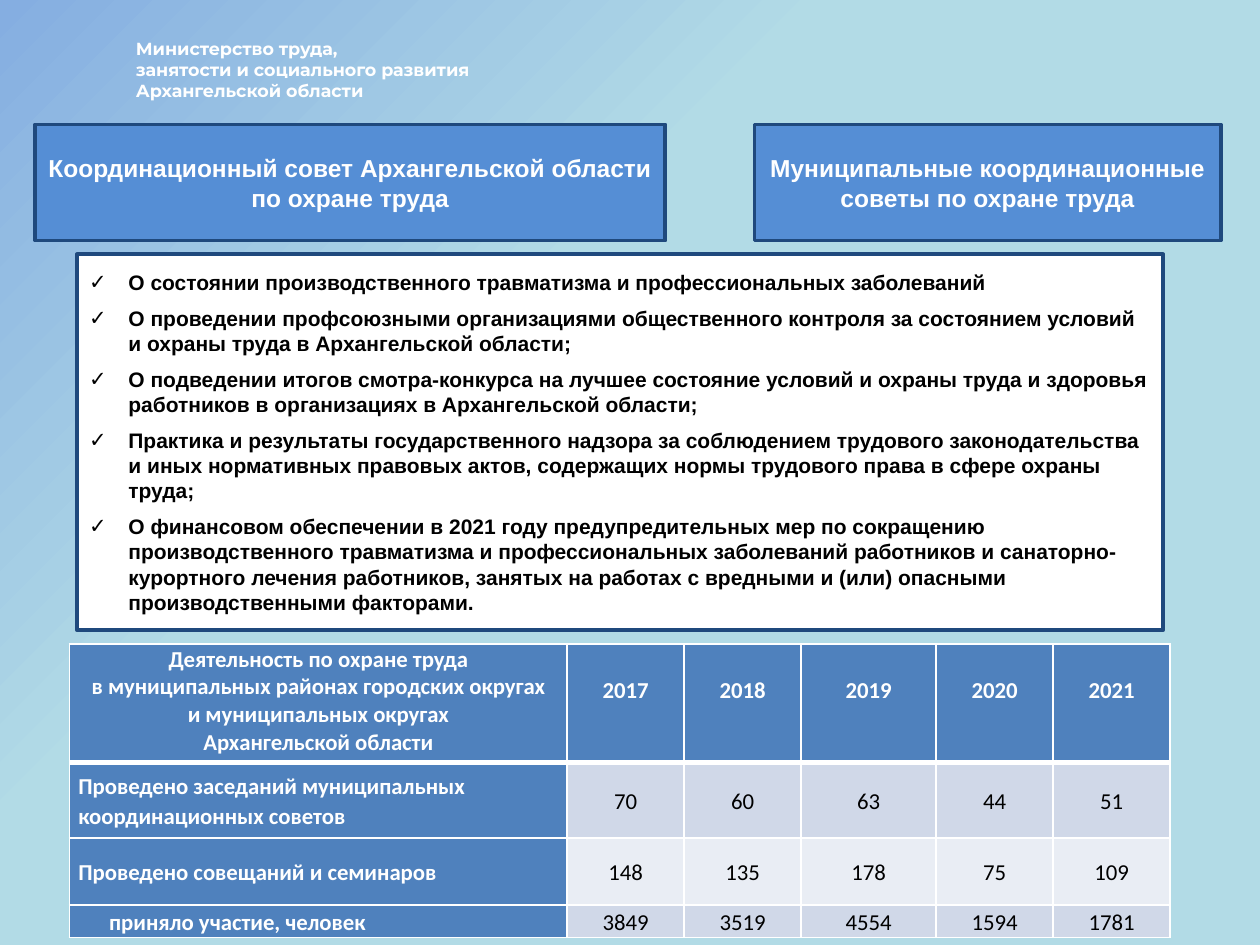
from lxml import etree
from pptx import Presentation
from pptx.dml.color import RGBColor
from pptx.enum import shapes, text
from pptx.oxml import parse_xml
from pptx.oxml.ns import nsdecls, qn
from pptx.util import Cm, Pt

WHITE = RGBColor(0xFF, 0xFF, 0xFF)
BLACK = RGBColor(0, 0, 0)
NAVY = RGBColor(0x1F, 0x49, 0x7D)
BLUE = RGBColor(0x55, 0x8E, 0xD5)
TABLE_BLUE = RGBColor(0x4F, 0x81, 0xBD)
BAND_DARK = RGBColor(0xD0, 0xD8, 0xE8)
BAND_LIGHT = RGBColor(0xE9, 0xED, 0xF4)
SKY = RGBColor(0x85, 0xAE, 0xE1)
AQUA = RGBColor(0xB2, 0xDB, 0xE6)

LEFT, CENTER = text.PP_ALIGN.LEFT, text.PP_ALIGN.CENTER
TOP, MIDDLE = text.MSO_ANCHOR.TOP, text.MSO_ANCHOR.MIDDLE

MINISTRY = ["Министерство труда,", "занятости и социального развития",
            "Архангельской области"]
TOPICS = [
    "О состоянии производственного травматизма и профессиональных заболеваний",
    "О проведении профсоюзными организациями общественного контроля за состоянием "
    "условий и охраны труда в Архангельской области;",
    "О подведении итогов смотра-конкурса на лучшее состояние условий и охраны труда "
    "и здоровья работников в организациях в Архангельской области;",
    "Практика и результаты государственного надзора за соблюдением трудового "
    "законодательства и иных нормативных правовых актов, содержащих нормы трудового "
    "права в сфере охраны труда;",
    "О финансовом обеспечении в 2021 году предупредительных мер по сокращению "
    "производственного травматизма и профессиональных заболеваний работников и "
    "санаторно-курортного лечения работников, занятых на работах с вредными и (или) "
    "опасными производственными факторами.",
]
TABLE_TITLE = ["Деятельность по охране труда",
               "в муниципальных районах городских округах",
               "и муниципальных округах", "Архангельской области"]
YEARS = ["2017", "2018", "2019", "2020", "2021"]
ACTIVITY = [
    ("Проведено заседаний муниципальных координационных советов", 70, 60, 63, 44, 51),
    ("Проведено совещаний и семинаров", 148, 135, 178, 75, 109),
    ("приняло участие, человек", 3849, 3519, 4554, 1594, 1781),
]
COLUMN_WIDTHS = [10.03, 2.36, 2.36, 2.72, 2.36, 2.36]
ROW_HEIGHTS = [2.39, 1.52, 1.35, 0.66]


def write(frame, lines, *, font, size, color, bold=True, align=LEFT,
          after=0, spacing=None, bullet=None):
    """Put each line in its own paragraph of the text frame."""
    for i, line in enumerate(lines):
        para = frame.add_paragraph() if i else frame.paragraphs[0]
        para.alignment = align
        para.space_after = Pt(after)
        if spacing:
            para.line_spacing = spacing
        if bullet:
            add_bullet(para, bullet)
        span = para.add_run()
        span.text = line
        span.font.name = font
        span.font.size = Pt(size)
        span.font.bold = bold
        span.font.color.rgb = color


def add_bullet(para, mark):
    props = para._p.get_or_add_pPr()
    props.set("marL", str(Cm(0.79)))
    props.set("indent", str(-Cm(0.79)))
    etree.SubElement(props, qn("a:buFont")).set("typeface", "Arial")
    etree.SubElement(props, qn("a:buChar")).set("char", mark)


def set_background(page):
    stops = "".join(f'<a:gs pos="{pos}"><a:srgbClr val="{color}"/></a:gs>'
                    for pos, color in ((0, SKY), (38000, AQUA), (100000, AQUA)))
    page.background.fill.solid()
    props = page._element.cSld.bg.bgPr
    props.replace(props[0], parse_xml(
        f'<a:gradFill {nsdecls("a")} rotWithShape="1"><a:gsLst>{stops}</a:gsLst>'
        '<a:lin ang="2700000" scaled="0"/></a:gradFill>'))


def add_panel(page, left, top, width, height, fill, lines, **style):
    panel = page.shapes.add_shape(shapes.MSO_SHAPE.RECTANGLE, Cm(left), Cm(top),
                                  Cm(width), Cm(height))
    panel.shadow.inherit = False
    panel.fill.solid()
    panel.fill.fore_color.rgb = fill
    panel.line.color.rgb = NAVY
    panel.line.width = Pt(2.25)
    panel.text_frame.word_wrap = True
    panel.text_frame.vertical_anchor = MIDDLE
    write(panel.text_frame, lines, font="Arial", after=6, **style)


def add_ministry(page):
    box = page.shapes.add_textbox(Cm(2.49), Cm(0.64), Cm(8.41), Cm(1.55))
    box.text_frame.word_wrap = True
    write(box.text_frame, MINISTRY, font="Montserrat", size=10, color=WHITE)


def set_borders(cell, top=1, bottom=1):
    props = cell._tc.get_or_add_tcPr()
    for i, (side, points) in enumerate((("L", 1), ("R", 1), ("T", top), ("B", bottom))):
        props.insert(i, parse_xml(
            f'<a:ln{side} {nsdecls("a")} w="{Pt(points)}"><a:solidFill>'
            f'<a:srgbClr val="{WHITE}"/></a:solidFill></a:ln{side}>'))


def fill_cell(cell, lines, fill, *, left=0, top=0, right=0, anchor=MIDDLE, **style):
    cell.margin_left, cell.margin_top = Cm(left), Cm(top)
    cell.margin_right, cell.margin_bottom = Cm(right), 0
    cell.vertical_anchor = anchor
    cell.fill.solid()
    cell.fill.fore_color.rgb = fill
    write(cell.text_frame, lines, font="Calibri", size=13, **style)


def add_activity_table(page):
    table = page.shapes.add_table(
        len(ROW_HEIGHTS), len(COLUMN_WIDTHS), Cm(1.4), Cm(12.98),
        Cm(sum(COLUMN_WIDTHS)), Cm(sum(ROW_HEIGHTS))).table
    for column, width in zip(table.columns, COLUMN_WIDTHS):
        column.width = Cm(width)
    for row, height in zip(table.rows, ROW_HEIGHTS):
        row.height = Cm(height)

    fill_cell(table.cell(0, 0), TABLE_TITLE, TABLE_BLUE, left=0.18, right=0.18,
              top=0.03, anchor=TOP, color=WHITE, align=CENTER)
    for c, year in enumerate(YEARS, 1):
        fill_cell(table.cell(0, c), [year], TABLE_BLUE, top=0.61, anchor=TOP,
                  color=WHITE, align=CENTER, spacing=1.1)
    for r, (label, *values) in enumerate(ACTIVITY, 1):
        is_detail = r == len(ACTIVITY)
        fill_cell(table.cell(r, 0), [label], TABLE_BLUE, right=0.18,
                  left=0.8 if is_detail else 0.18, color=WHITE, spacing=1.1)
        band = BAND_DARK if r % 2 else BAND_LIGHT
        for c, value in enumerate(values, 1):
            fill_cell(table.cell(r, c), [str(value)], band, color=BLACK,
                      bold=False, align=CENTER, spacing=1.1)
    for r, row in enumerate(table.rows):
        for cell in row.cells:
            set_borders(cell, top=3 if r == 1 else 1, bottom=3 if r == 0 else 1)


def main():
    deck = Presentation()
    deck.slide_width, deck.slide_height = Cm(25.4), Cm(19.05)
    page = deck.slides.add_slide(deck.slide_layouts[6])
    set_background(page)
    add_ministry(page)
    add_panel(page, 1.55, 5.13, 21.9, 7.57, WHITE, TOPICS,
              size=12, color=BLACK, bullet="✓")
    heading = dict(size=14, color=WHITE, align=CENTER)
    add_panel(page, 15.21, 2.51, 9.4, 2.34, BLUE,
              ["Муниципальные координационные советы по охране труда"], **heading)
    add_panel(page, 0.71, 2.51, 12.7, 2.34, BLUE,
              ["Координационный совет Архангельской области по охране труда"], **heading)
    add_activity_table(page)
    deck.save("out.pptx")


if __name__ == "__main__":
    main()
